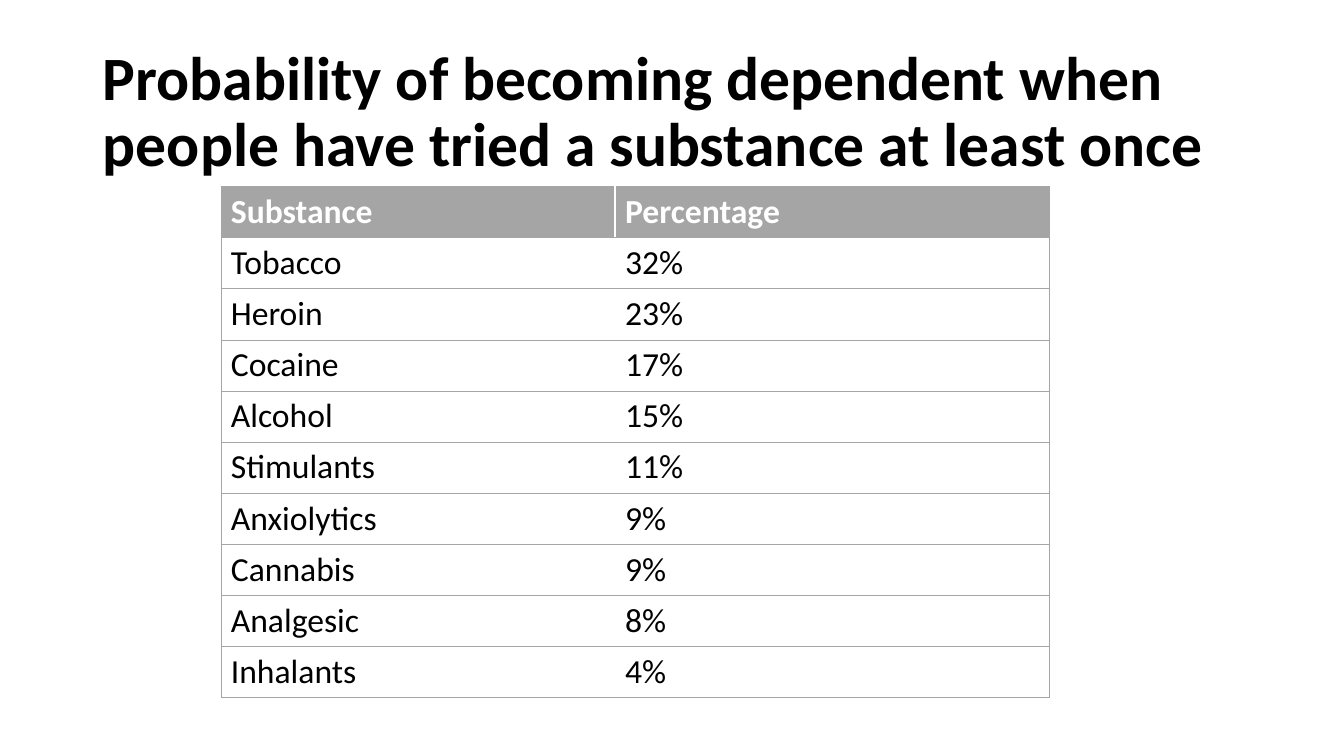
"""Build a slide with a table of dependence probability by substance."""
from lxml.etree import SubElement
from pptx import Presentation
from pptx.dml.color import RGBColor
from pptx.enum.text import MSO_ANCHOR, PP_ALIGN
from pptx.oxml.ns import qn
from pptx.util import Inches, Pt

TITLE = "Probability of becoming dependent when people have tried a substance at least once"
HEADER = ("Substance", "Percentage")
PROBABILITIES = [
    ("Tobacco", "32%"),
    ("Heroin", "23%"),
    ("Cocaine", "17%"),
    ("Alcohol", "15%"),
    ("Stimulants", "11%"),
    ("Anxiolytics", "9%"),
    ("Cannabis", "9%"),
    ("Analgesic", "8%"),
    ("Inhalants", "4%"),
]
COLORS = {"text": "000000", "header_text": "FFFFFF", "grid": "A5A5A5"}
FONT = "Calibri"
COLUMN_WIDTHS = (3.91, 4.31)
ROW_HEIGHT = 0.5


def write(frame, text, size=24, color="text", bold=False, line_spacing=1.0):
    """Put one formatted paragraph in a text frame."""
    frame.word_wrap = True
    paragraph = frame.paragraphs[0]
    paragraph.alignment = PP_ALIGN.LEFT
    paragraph.line_spacing = line_spacing
    run = paragraph.add_run()
    run.text = text
    run.font.name = FONT
    run.font.size = Pt(size)
    run.font.bold = bold
    run.font.color.rgb = RGBColor.from_string(COLORS[color])


def add_borders(cell, sides):
    """Draw thin grid lines on the given sides, in the order L, R, T, B."""
    properties = cell._tc.get_or_add_tcPr()
    for side in sides:
        line = SubElement(properties, qn(f"a:ln{side}"), w=str(Pt(0.5)))
        fill = SubElement(line, qn("a:solidFill"))
        SubElement(fill, qn("a:srgbClr"), val=COLORS["grid"])


def add_probability_table(slide):
    """Add the header and one row per substance."""
    rows = [HEADER, *PROBABILITIES]
    frame = slide.shapes.add_table(
        len(rows), len(HEADER), Inches(2.19), Inches(1.85),
        Inches(sum(COLUMN_WIDTHS)), Inches(ROW_HEIGHT * len(rows)))
    table = frame.table
    table.horz_banding = False
    for column, width in zip(table.columns, COLUMN_WIDTHS):
        column.width = Inches(width)
    for r, values in enumerate(rows):
        table.rows[r].height = Inches(ROW_HEIGHT)
        is_header = r == 0
        for c, value in enumerate(values):
            cell = table.cell(r, c)
            write(cell.text_frame, value, bold=is_header,
                  color="header_text" if is_header else "text")
            add_borders(cell, ("L" if c == 0 else "R", "T", "B"))
            if is_header:
                cell.fill.solid()
                cell.fill.fore_color.rgb = RGBColor.from_string(COLORS["grid"])
            else:
                cell.fill.background()


def main():
    """Assemble and save the slide."""
    deck = Presentation()
    deck.slide_width, deck.slide_height = Inches(13.33), Inches(7.5)
    slide = deck.slides.add_slide(deck.slide_layouts[5])
    title = slide.shapes.title
    title.left, title.top = Inches(0.92), Inches(0.4)
    title.width, title.height = Inches(11.5), Inches(1.45)
    title.text_frame.vertical_anchor = MSO_ANCHOR.MIDDLE
    write(title.text_frame, TITLE, size=44, bold=True, line_spacing=0.9)
    add_probability_table(slide)
    deck.save("out.pptx")


if __name__ == "__main__":
    main()
